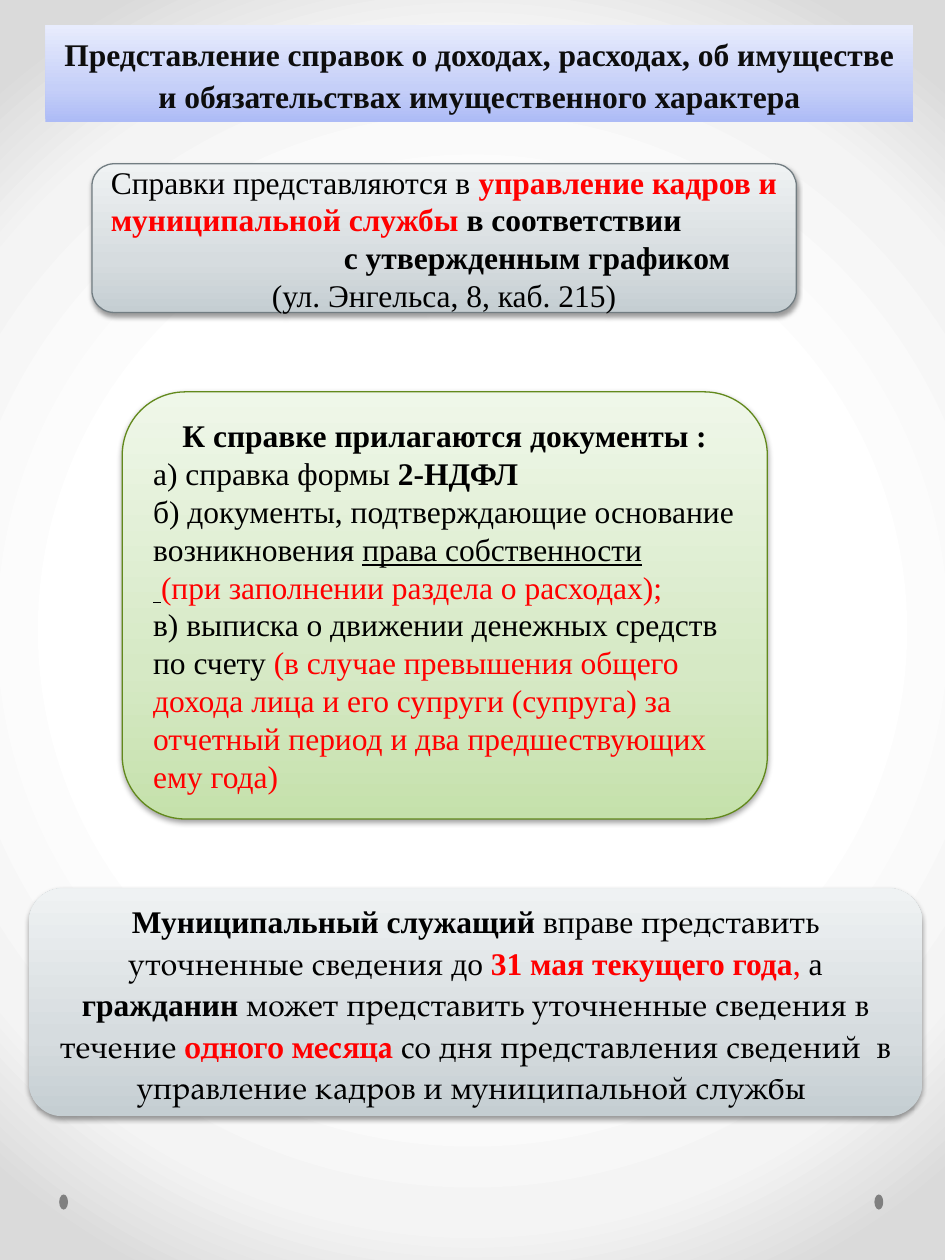
from lxml import etree
from pptx import Presentation
from pptx.dml.color import RGBColor
from pptx.enum.shapes import MSO_SHAPE
from pptx.enum.text import MSO_ANCHOR, PP_ALIGN
from pptx.oxml.ns import qn
from pptx.util import Inches, Pt

RECTANGLE, ROUNDED, OVAL = MSO_SHAPE.RECTANGLE, MSO_SHAPE.ROUNDED_RECTANGLE, MSO_SHAPE.OVAL
LEFT, CENTER = PP_ALIGN.LEFT, PP_ALIGN.CENTER
SERIF, BOOK = "Times New Roman", "TeX Gyre Pagella"
COLORS = {
    "black": "000000", "title": "0D0D0D", "red": "FF0000", "dot": "808080",
    "gray line": "727D82", "green line": "62891C",
}
GRADIENTS = {
    "page": [(50, "FFFFFF"), (76, "F4F4F4"), (92, "DADADA")],
    "blue": [(0, "ADBBF6"), (35, "C5CFF8"), (100, "E8ECFD")],
    "gray": [(0, "C5CED2"), (35, "D6DCDF"), (100, "EFF2F3")],
    "green": [(0, "C5E1AB"), (35, "D6E9C5"), (100, "EFF7E9")],
}


def set_gradient(owner, fill, stops, radial=False):
    """Give the fill of a slide background or shape any number of stops."""
    fill.gradient()
    gradient = next(owner._element.iter(qn("a:gradFill")))
    for child in list(gradient):
        gradient.remove(child)
    stop_list = etree.SubElement(gradient, qn("a:gsLst"))
    for position, color in stops:
        stop = etree.SubElement(stop_list, qn("a:gs"), pos=str(position * 1000))
        etree.SubElement(stop, qn("a:srgbClr"), val=color)
    if radial:
        path = etree.SubElement(gradient, qn("a:path"))
        path.set("path", "circle")
        etree.SubElement(path, qn("a:fillToRect"), l="50000", t="50000", r="50000", b="50000")
    else:
        etree.SubElement(gradient, qn("a:lin"), ang="16200000", scaled="0")


def add_paragraph(frame, runs, alignment=CENTER, spaced=False):
    """Add runs of (text, style words); the style words name a colour, bold, underline or book."""
    paragraph = frame.paragraphs[0]
    if paragraph.runs:
        paragraph = frame.add_paragraph()
    paragraph.alignment = alignment
    paragraph.font.size = Pt(18)
    if spaced:
        paragraph.line_spacing = 1.1
        paragraph.space_before, paragraph.space_after = Pt(4.5), Pt(3.6)
    for text, style in runs:
        words = style.split()
        color = next((word for word in words if word in COLORS), "black")
        run = paragraph.add_run()
        run.text = text
        run.font.size = Pt(18)
        run.font.name = BOOK if "book" in words else SERIF
        run.font.bold = "bold" in words
        run.font.underline = "underline" in words
        run.font.color.rgb = RGBColor.from_string(COLORS[color])
    return paragraph


presentation = Presentation()
presentation.slide_width, presentation.slide_height = Inches(7.5), Inches(10)
slide = presentation.slides.add_slide(presentation.slide_layouts[6])
set_gradient(slide, slide.background.fill, GRADIENTS["page"], radial=True)

for left in (0.47, 6.94):
    dot = slide.shapes.add_shape(OVAL, Inches(left), Inches(9.48), Inches(0.07), Inches(0.12))
    dot.shadow.inherit = False
    dot.fill.solid()
    dot.fill.fore_color.rgb = RGBColor.from_string(COLORS["dot"])
    dot.line.fill.background()

panels = [
    ("title", RECTANGLE, (0.36, 0.2, 6.89, 0.77), "blue", None),
    ("place", ROUNDED, (0.73, 1.3, 5.59, 1.18), "gray", "gray line"),
    ("corrections", ROUNDED, (0.23, 7.05, 7.09, 1.81), "gray", None),
    ("documents", ROUNDED, (0.97, 3.11, 5.12, 3.39), "green", "green line"),
]
frames = {}
for name, preset, box, gradient_name, line_color in panels:
    shape = slide.shapes.add_shape(preset, *[Inches(value) for value in box])
    shape.shadow.inherit = False
    set_gradient(shape, shape.fill, GRADIENTS[gradient_name])
    if line_color:
        shape.line.color.rgb = RGBColor.from_string(COLORS[line_color])
        shape.line.width = Pt(0.75)
    else:
        shape.line.fill.background()
    frame = shape.text_frame
    frame.word_wrap = True
    frame.vertical_anchor = MSO_ANCHOR.TOP
    if preset == ROUNDED:
        shape.adjustments[0] = 0.148
        frame.vertical_anchor = MSO_ANCHOR.MIDDLE
        effects = shape._element.spPr.find(qn("a:effectLst"))
        shadow = etree.SubElement(effects, qn("a:outerShdw"), blurRad=str(Pt(3.1)),
                                  dist=str(Pt(1.6)), dir="5400000", rotWithShape="0")
        shadow_color = etree.SubElement(shadow, qn("a:srgbClr"), val=COLORS["black"])
        etree.SubElement(shadow_color, qn("a:alpha"), val="38000")
    frames[name] = frame

add_paragraph(frames["title"], [
    ("Представление справок о доходах, расходах, об имуществе "
     "и обязательствах имущественного характера", "title bold"),
], spaced=True)

add_paragraph(frames["place"], [
    ("Справки представляются в ", ""),
    ("управление кадров и муниципальной службы ", "red bold"),
    ("в соответствии", "bold"),
], LEFT)
schedule = add_paragraph(frames["place"], [("с утвержденным графиком", "bold")], LEFT)
schedule._p.get_or_add_pPr().set("marL", str(Inches(1.85)))
add_paragraph(frames["place"], [("(ул. Энгельса, 8, каб. 215)", "")])

documents = frames["documents"]
add_paragraph(documents, [("К справке прилагаются документы :", "bold")])
add_paragraph(documents, [("а) справка формы", ""), (" 2-НДФЛ", "bold")], LEFT)
ownership = add_paragraph(documents, [
    ("б) документы, подтверждающие основание возникновения ", ""),
    ("права собственности\t", "underline"),
], LEFT)
# The underlined tab draws the rule that runs on to the right edge.
tab_list = etree.Element(qn("a:tabLst"))
etree.SubElement(tab_list, qn("a:tab"), pos=str(Inches(4.55)), algn="l")
ownership._p.get_or_add_pPr().insert(0, tab_list)
add_paragraph(documents, [
    (" ", "underline"), ("(при заполнении раздела о расходах);", "red"),
], LEFT)
add_paragraph(documents, [
    ("в) выписка о движении денежных средств по счету ", ""),
    ("(в случае превышения общего дохода лица и его супруги (супруга) "
     "за отчетный период и два предшествующих ему года)", "red"),
], LEFT)

add_paragraph(frames["corrections"], [
    ("Муниципальный служащий ", "bold"),
    ("вправе ", ""),
    ("представить уточненные сведения ", "book"),
    ("до ", ""),
    ("31 мая текущего года", "red bold"),
    (", ", "red"),
    ("а ", ""),
    ("гражданин ", "bold"),
    ("может представить уточненные сведения в течение ", "book"),
    ("одного месяца ", "book red bold"),
    ("со дня представления сведений  в управление кадров и муниципальной службы ", "book"),
], spaced=True)

presentation.save("out.pptx")
